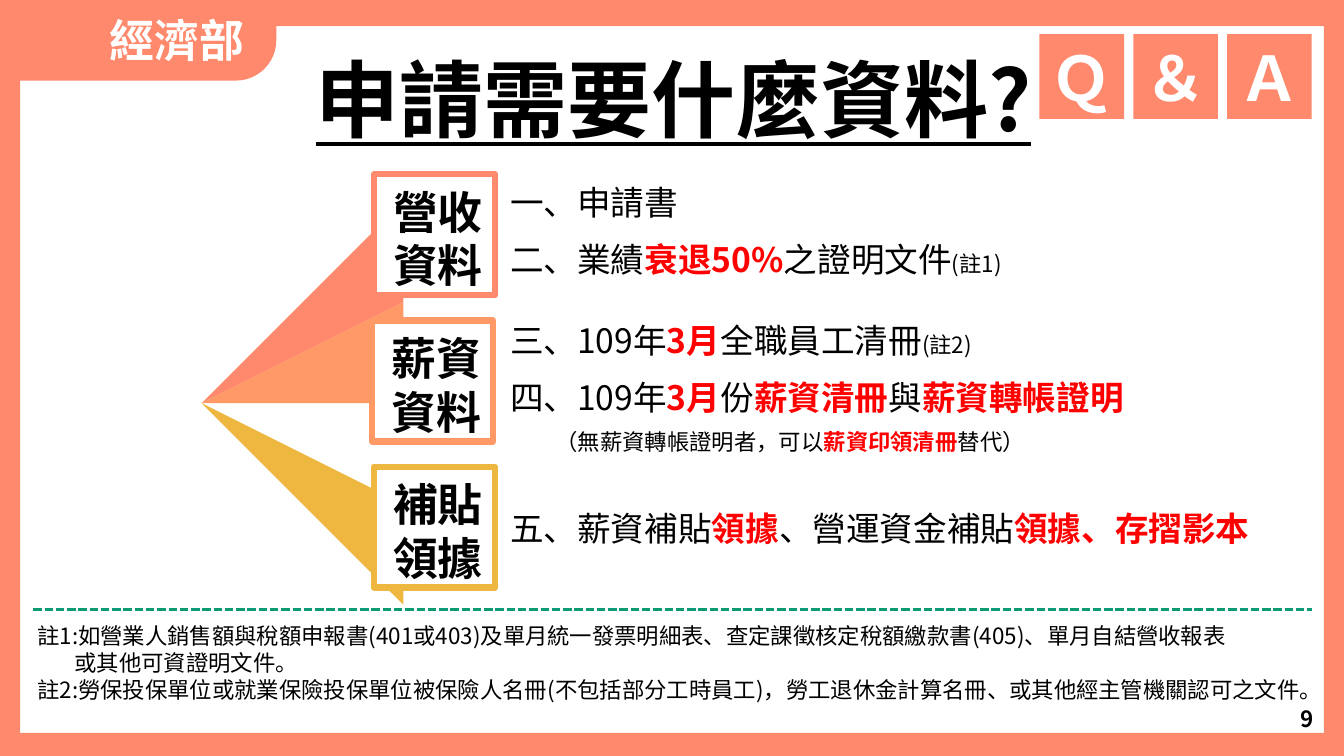
from dataclasses import dataclass

from lxml import etree
from pptx import Presentation
from pptx import util as u
from pptx.dml.color import RGBColor
from pptx.enum import dml, shapes, text
from pptx.oxml import ns

FONT = "Noto Sans CJK SC"
CORAL, ORANGE, GOLD, GREEN = "FF896D", "FF9966", "EDB740", "0C9B74"
BLACK, WHITE, RED = "000000", "FFFFFF", "FF0000"
ALIGN, ANCHOR = text.PP_ALIGN, text.MSO_ANCHOR
SHAPE = shapes.MSO_SHAPE


@dataclass
class Span:
    text: str
    size: float = 24
    key: bool = False  # key words are bold red


@dataclass
class Line:
    spans: list[Span]
    before: float = 0
    after: float = 0
    margin: float = 0
    hanging: float = 0


@dataclass
class Block:
    left: float
    top: float
    width: float
    height: float
    align: ALIGN
    lines: list[Line]


@dataclass
class Topic:
    label: str
    color: str
    left: float
    wedge: list[tuple[float, float]]


def rgb(color: str) -> RGBColor:
    return RGBColor.from_string(color)


def place(item, left: float, top: float, width: float, height: float) -> None:
    item.left, item.top = u.Inches(left), u.Inches(top)
    item.width, item.height = u.Inches(width), u.Inches(height)


def style(span, size: float, color: str = BLACK, bold: bool = True) -> None:
    font = span.font
    font.size, font.bold, font.name = u.Pt(size), bold, FONT
    font.color.rgb = rgb(color)
    east = etree.SubElement(span._r.get_or_add_rPr(), ns.qn("a:ea"))
    east.set("typeface", FONT)


def write(item, words: str, size: float, color: str = BLACK,
          align: ALIGN = ALIGN.LEFT, anchor: ANCHOR = ANCHOR.TOP) -> None:
    frame = item.text_frame
    frame.text = words
    frame.word_wrap, frame.vertical_anchor = True, anchor
    for para in frame.paragraphs:
        para.alignment = align
        for span in para.runs:
            style(span, size, color)


def add_label(page, left: float, top: float, width: float, height: float,
              words: str, size: float, **options) -> None:
    box = page.shapes.add_textbox(0, 0, 0, 0)
    place(box, left, top, width, height)
    write(box, words, size, **options)


def paint(shape, fill: str, line: str = "", weight: float = 0) -> None:
    shape.shadow.inherit = False
    shape.fill.solid()
    shape.fill.fore_color.rgb = rgb(fill)
    if line:
        shape.line.color.rgb = rgb(line)
        shape.line.width = u.Pt(weight)
    else:
        shape.line.fill.background()


def add_block(page, left: float, top: float, width: float, height: float,
              fill: str, kind: SHAPE = SHAPE.RECTANGLE, line: str = "", weight: float = 0):
    shape = page.shapes.add_shape(kind, 0, 0, 0, 0)
    place(shape, left, top, width, height)
    paint(shape, fill, line, weight)
    return shape


def fill_body(body, block: Block) -> None:
    place(body, block.left, block.top, block.width, block.height)
    frame = body.text_frame
    frame.word_wrap, frame.vertical_anchor = True, ANCHOR.TOP
    frame.auto_size = text.MSO_AUTO_SIZE.NONE
    for index, line in enumerate(block.lines):
        para = frame.add_paragraph() if index else frame.paragraphs[0]
        props = para._p.get_or_add_pPr()
        props.set("marL", str(u.Inches(line.margin)))
        props.set("indent", str(-u.Inches(line.hanging)))
        etree.SubElement(props, ns.qn("a:buNone"))
        para.alignment = block.align
        para.space_before, para.space_after = u.Pt(line.before), u.Pt(line.after)
        for part in line.spans:
            span = para.add_run()
            span.text = part.text
            style(span, part.size, RED if part.key else BLACK, part.key)


def item(*spans: Span, before: float = 6, after: float = 6) -> Line:
    return Line(list(spans), before, after, 0.68, 0.68)


def note(words: str, margin: float = 0) -> Line:
    return Line([Span(words, 16)], margin=margin)


BLOCKS = [
    Block(4.96, 1.75, 7.57, 1.08, ALIGN.JUSTIFY, [
        item(Span("一、申請書"), before=0),
        item(Span("二、業績"), Span("衰退50%", key=True), Span("之證明文件"), Span("(註1)", 16)),
    ]),
    Block(4.96, 3.12, 7.84, 1.48, ALIGN.JUSTIFY, [
        item(Span("三、109年"), Span("3月", key=True), Span("全職員工清冊"),
             Span("(註2)", 16), before=0),
        item(Span("四、109年"), Span("3月", key=True), Span("份"), Span("薪資清冊", key=True),
             Span("與"), Span("薪資轉帳證明", key=True), after=0),
        Line([Span("（無薪資轉帳證明者，可以", 16), Span("薪資印領清冊", 16, True),
              Span("替代）", 16)], before=8, margin=0.45),
    ]),
    Block(4.96, 4.99, 7.7, 0.5, ALIGN.JUSTIFY, [
        item(Span("五、薪資補貼"), Span("領據", key=True), Span("、營運資金補貼"),
             Span("領據、存摺影本", key=True), before=0),
    ]),
    Block(0.27, 6.12, 12.86, 0.91, ALIGN.LEFT, [
        note("註1:如營業人銷售額與稅額申報書(401或403)及單月統一發票明細表、"
             "查定課徵核定稅額繳款書(405)、單月自結營收報表"),
        note("或其他可資證明文件。", 0.37),
        note("註2:勞保投保單位或就業保險投保單位被保險人名冊(不包括部分工時員工)，"
             "勞工退休金計算名冊、或其他經主管機關認可之文件。"),
    ]),
]
HUB = (1.8, 4.5)
TOPICS = [
    Topic("營收\n資料", CORAL, 3.71, [(3.64, 1.72), HUB, (3.65, 2.95)]),
    Topic("薪資\n資料", ORANGE, 3.69, [(3.64, 3.16), HUB, (3.64, 4.4)]),
    Topic("補貼\n領據", GOLD, 3.71, [(3.63, 5.83), HUB, (3.64, 4.59)]),
]
FRAME = [(0.36, 0, 12.98, 0.26), (0, 0, 0.2, 7.5), (13.13, 0.26, 0.21, 7.24),
         (0.16, 7.27, 12.98, 0.23)]


def add_topic(page, topic: Topic, top: float) -> None:
    builder = page.shapes.build_freeform(*topic.wedge[0], scale=u.Inches(1))
    builder.add_line_segments(topic.wedge[1:], close=True)
    paint(builder.convert_to_shape(), topic.color)
    square = add_block(page, topic.left, top, 1.2, 1.2, WHITE, line=topic.color, weight=4.5)
    write(square, topic.label, 32)
    frame = square.text_frame
    frame.margin_left, frame.margin_top = u.Inches(0.19), u.Inches(0.1)
    frame.margin_right = frame.margin_bottom = 0


def main() -> None:
    deck = Presentation()
    deck.slide_width, deck.slide_height = u.Inches(13.33), u.Inches(7.5)
    page = deck.slides.add_slide(deck.slide_layouts.get_by_name("Comparison"))

    # Frame and ministry corner
    for edge in FRAME:
        add_block(page, *edge, CORAL)
    corner = add_block(page, 0.05, 0, 2.69, 0.8, CORAL, SHAPE.ROUND_1_RECTANGLE)
    corner.adjustments[0] = 0.5
    corner._element.spPr.get_or_add_xfrm().set("flipV", "1")
    add_label(page, 0.99, 0.08, 2.18, 0.64, "經濟部", 32, color=WHITE)

    # Title
    title = page.shapes.title
    place(title, 0.54, 0.32, 12.28, 1.21)
    write(title, "申請需要什麼資料?", 60, align=ALIGN.CENTER, anchor=ANCHOR.BOTTOM)
    title.text_frame.auto_size = text.MSO_AUTO_SIZE.NONE
    heading = title.text_frame.paragraphs[0]
    heading.line_spacing = 0.9
    heading.runs[0].font.underline = True

    # Q & A tiles
    for index, letter in enumerate("Ｑ＆Ａ"):
        tile = add_block(page, 10.31 + 0.93 * index, 0.34, 0.84, 0.84, CORAL)
        write(tile, letter, 44, WHITE, ALIGN.CENTER, ANCHOR.MIDDLE)

    # Topic fan
    for index, topic in enumerate(TOPICS):
        add_topic(page, topic, 1.73 + 1.45 * index)

    # Document lists and notes
    bodies = [body for body in page.placeholders if body.placeholder_format.idx in range(1, 5)]
    for body, block in zip(bodies, BLOCKS):
        fill_body(body, block)

    # Divider and page number
    divider = page.shapes.add_connector(shapes.MSO_CONNECTOR.STRAIGHT, u.Inches(0.33),
                                        u.Inches(6.05), u.Inches(13.01), u.Inches(6.05))
    divider.line.color.rgb = rgb(GREEN)
    divider.line.width = u.Pt(2)
    divider.line.dash_style = dml.MSO_LINE.SQUARE_DOT
    etree.SubElement(divider._element.spPr, ns.qn("a:effectLst"))
    add_label(page, 10.13, 6.93, 3, 0.4, "9", 16, align=ALIGN.RIGHT, anchor=ANCHOR.MIDDLE)

    deck.save("out.pptx")


if __name__ == "__main__":
    main()
